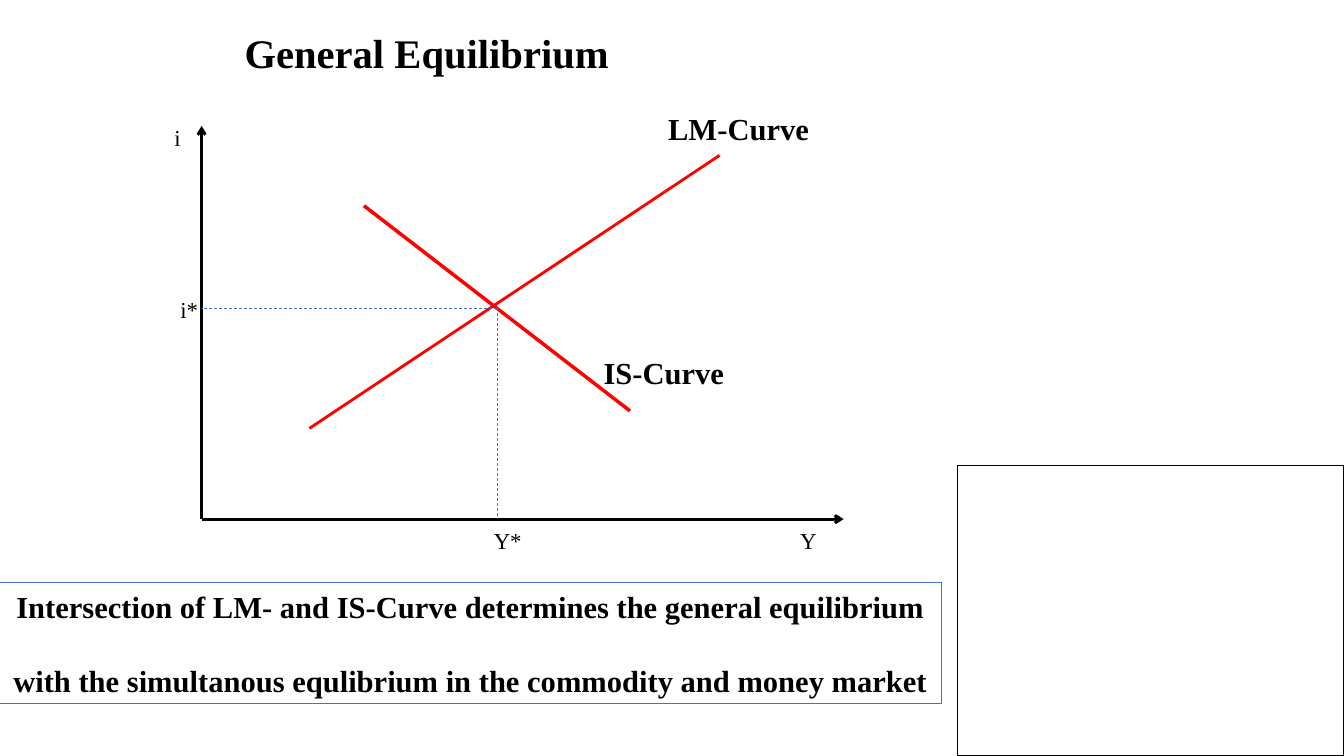
from lxml.etree import SubElement
from pptx import Presentation
from pptx.dml.color import RGBColor
from pptx.enum.dml import MSO_LINE
from pptx.enum.shapes import MSO_CONNECTOR, MSO_SHAPE
from pptx.enum.text import MSO_ANCHOR, PP_ALIGN
from pptx.oxml.ns import qn
from pptx.util import Pt

COLORS = {"text": "000000", "curve": "FF0000", "guide": "4472C4"}
FONT = "Times New Roman"
TITLE_SIZE, LABEL_SIZE, AXIS_SIZE = 29, 21.8, 16.3


def color(name):
    return RGBColor.from_string(COLORS[name])


def add_run(paragraph, text, size, bold=False):
    run = paragraph.add_run()
    run.text = text
    run.font.name = FONT
    run.font.size = Pt(size)
    run.font.bold = bold
    run.font.color.rgb = color("text")


def add_line(slide, start, end, color_name, width, dashed=False, arrow=False):
    line = slide.shapes.add_connector(
        MSO_CONNECTOR.STRAIGHT, *(Pt(value) for value in (*start, *end)))
    line.line.color.rgb = color(color_name)
    line.line.width = Pt(width)
    if dashed:
        line.line.dash_style = MSO_LINE.DASH
    properties = line._element.spPr
    if arrow:
        SubElement(properties.find(qn("a:ln")), qn("a:tailEnd"), type="arrow")
    SubElement(properties, qn("a:effectLst"))


def add_label(slide, text, left, top, width, height, size, bold=False):
    label = slide.shapes.add_textbox(Pt(left), Pt(top), Pt(width), Pt(height))
    label.text_frame.word_wrap = False
    add_run(label.text_frame.paragraphs[0], text, size, bold)


def add_frame(slide, left, top, width, height, color_name, line_width):
    """Add an unfilled rectangle with a thin outline."""
    frame = slide.shapes.add_shape(
        MSO_SHAPE.RECTANGLE, Pt(left), Pt(top), Pt(width), Pt(height))
    frame.shadow.inherit = False
    frame.fill.background()
    frame.line.color.rgb = color(color_name)
    frame.line.width = Pt(line_width)
    return frame


def format_title(slide, left, top, width, height):
    title = slide.shapes.title
    title.left, title.top = Pt(left), Pt(top)
    title.width, title.height = Pt(width), Pt(height)
    text_frame = title.text_frame
    text_frame.vertical_anchor = MSO_ANCHOR.MIDDLE
    text_frame.margin_left = text_frame.margin_right = Pt(6.5)
    text_frame.margin_top = text_frame.margin_bottom = Pt(3)
    paragraph = text_frame.paragraphs[0]
    paragraph.alignment = PP_ALIGN.CENTER
    add_run(paragraph, "General Equilibrium", TITLE_SIZE, bold=True)


def add_diagram(slide, left, top, width, height):
    """Draw the IS-LM diagram; the box is the area spanned by the axes."""
    def at(x, y):
        return left + x, top + y

    origin = at(0, height)
    for axis_end in (at(0, 0), at(width, height)):
        add_line(slide, origin, axis_end, "text", 2, arrow=True)

    add_line(slide, at(77, 216), at(370, 21), "curve", 2)
    add_line(slide, at(116, 57), at(306, 203.5), "curve", 2.5)
    add_label(slide, "IS-Curve", *at(280, 159), 101.5, 34, LABEL_SIZE, bold=True)
    add_label(slide, "LM-Curve", *at(326.2, -15.1), 116, 34, LABEL_SIZE, bold=True)

    equilibrium = at(211, 130.3)
    for guide_end in (at(0, 130.3), at(211, height)):
        add_line(slide, equilibrium, guide_end, "guide", 0.5, dashed=True)

    for text, x, y, label_width in (
        ("i", -26.6, -5, 19.5),
        ("i*", -22.3, 117.4, 27.4),
        ("Y*", 201.6, height + 1.5, 34.6),
        ("Y", 420.5, height + 1.5, 26.6),
    ):
        add_label(slide, text, *at(x, y), label_width, 27.4, AXIS_SIZE)


def add_conclusion(slide, left, top, width, height):
    box = add_frame(slide, left, top, width, height, "guide", 0.75)
    text_frame = box.text_frame
    text_frame.word_wrap = False
    text_frame.vertical_anchor = MSO_ANCHOR.MIDDLE
    first = text_frame.paragraphs[0]
    second = text_frame.add_paragraph()
    second.space_before = Pt(27)
    for paragraph, text in (
        (first, "Intersection of LM- and IS-Curve determines the general equilibrium"),
        (second, "with the simultanous equlibrium in the commodity and money market"),
    ):
        paragraph.alignment = PP_ALIGN.CENTER
        add_run(paragraph, text, LABEL_SIZE, bold=True)


def main():
    presentation = Presentation()
    presentation.slide_width, presentation.slide_height = Pt(960), Pt(540)
    slide = presentation.slides.add_slide(presentation.slide_layouts[5])
    format_title(slide, 5.8, 7.9, 598.3, 58.3)
    add_diagram(slide, 144, 90, 458.6, 280.8)
    add_conclusion(slide, 0, 416.2, 672.5, 86.4)
    add_frame(slide, 684, 332.6, 276, 207.4, "text", 1)
    presentation.save("out.pptx")


if __name__ == "__main__":
    main()
